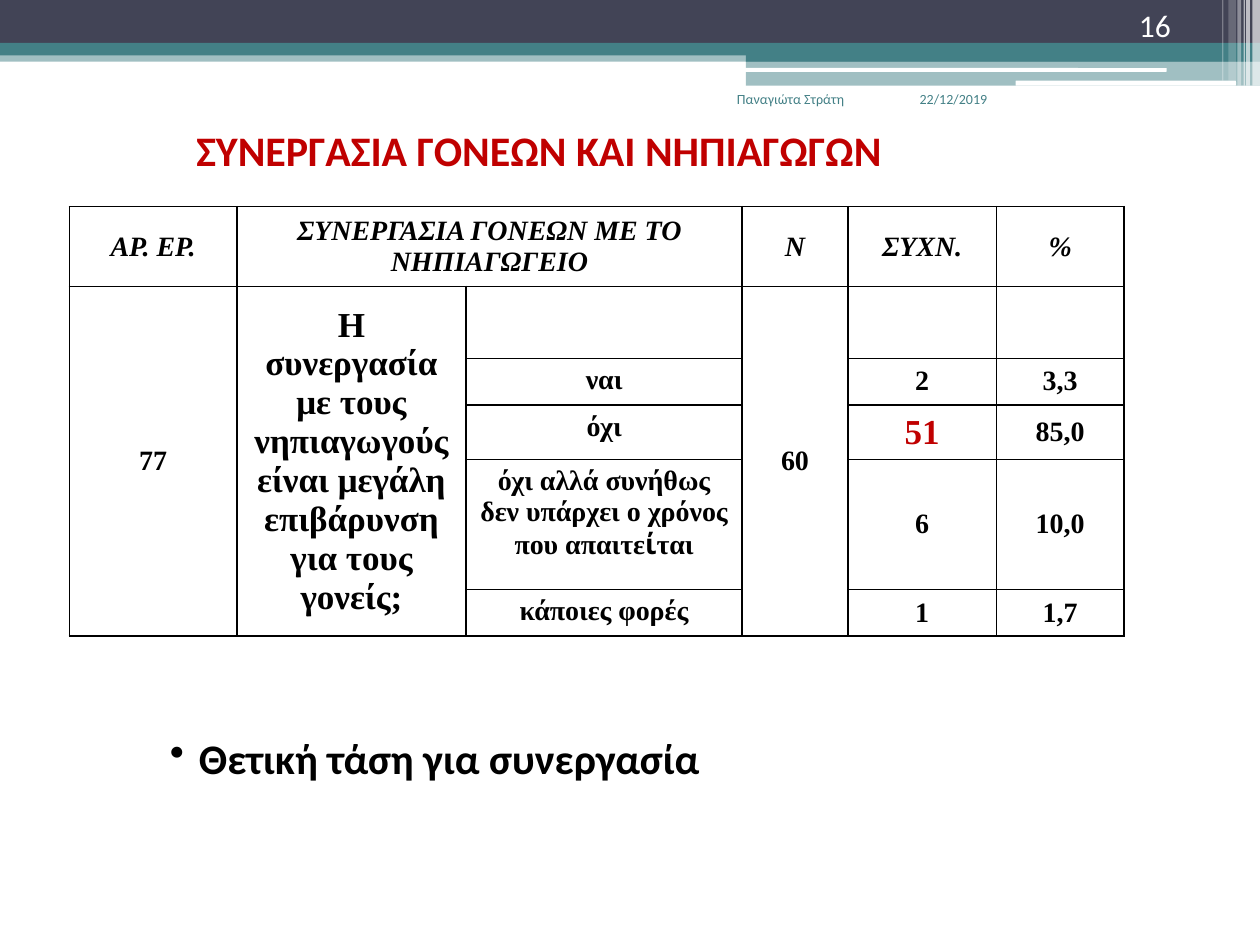
from lxml.etree import SubElement as Sub
from pptx import Presentation
from pptx.dml.color import RGBColor as RGB
from pptx.enum.shapes import MSO_SHAPE as Shape
from pptx.enum.text import MSO_ANCHOR as Anchor, PP_ALIGN as Align
from pptx.oxml.ns import qn
from pptx.util import Inches, Pt

HUES = {"navy": "424456", "teal": "438086", "white": "FFFFFF",
        "black": "000000", "red": "C00000"}
SERIF = "Times New Roman"

# left, top, width, height, hue, opacity in percent
BARS = [
    (0, 0.4, 10, 0.09, "teal", 50),
    (0, 0, 10, 0.34, "navy", 100),
    (0, 0.34, 10, 0.1, "teal", 100),
    (5.92, 0.39, 4.08, 0.1, "teal", 100),
    (5.92, 0.48, 4.08, 0.2, "teal", 50),
]
PILLS = [(5.91, 0.54, 3.35, 0.03), (8.06, 0.64, 1.75, 0.04)]
# left, width, height, opacity of the stripes at the right edge
STRIPES = [
    (9.94, 0.06, 0.68, 65), (9.89, 0.03, 0.68, 65), (9.87, 0.01, 0.68, 60),
    (9.82, 0.03, 0.68, 40), (9.75, 0.06, 0.64, 20), (9.7, 0.01, 0.64, 30),
]

COLS = [1.33, 1.82, 2.19, 0.84, 1.18, 1.01]
ROWS = [0.63, 0.57, 0.37, 0.43, 1.03, 0.37]
HEAD = ["ΑΡ. ΕΡ.", "ΣΥΝΕΡΓΑΣΙΑ ΓΟΝΕΩΝ ΜΕ ΤΟ ΝΗΠΙΑΓΩΓΕΙΟ", "", "Ν", "ΣΥΧΝ.", "%"]
ASK = "Η συνεργασία με τους νηπιαγωγούς είναι μεγάλη επιβάρυνση για τους γονείς;"
DATA = [
    HEAD,
    ["77", ASK, "", "60", "", ""],
    ["", "", "ναι", "", "2", "3,3"],
    ["", "", "όχι", "", "51", "85,0"],
    ["", "", "όχι αλλά συνήθως δεν υπάρχει ο χρόνος που απαιτε|ί|ται", "", "6", "10,0"],
    ["", "", "κάποιες φορές", "", "1", "1,7"],
]
# first and last cell of each merged block
SPANS = [((0, 1), (0, 2))] + [((1, col), (5, col)) for col in (0, 1, 3)]


def color(hue):
    return RGB.from_string(HUES[hue])


def style(font, size, hue, name="Calibri", bold=False, italic=False):
    font.size, font.name = Pt(size), name
    font.bold, font.italic = bold, italic
    font.color.rgb = color(hue)


def add_bar(slide, box, hue, alpha=100, kind=Shape.RECTANGLE):
    bar = slide.shapes.add_shape(kind, *map(Inches, box))
    bar.shadow.inherit = False
    bar.line.fill.background()
    bar.fill.solid()
    bar.fill.fore_color.rgb = color(hue)
    if alpha < 100:
        tint = bar.fill._xPr.find(".//" + qn("a:srgbClr"))
        Sub(tint, qn("a:alpha"), val=str(alpha * 1000))


def add_text(slide, box, text, size, hue, bold=False, anchor=Anchor.TOP):
    frame = slide.shapes.add_textbox(*map(Inches, box)).text_frame
    frame.word_wrap = True
    frame.vertical_anchor = anchor
    para = frame.paragraphs[0]
    para.text = text
    style(para.font, size, hue, bold=bold)
    return para


def add_bullet(para, left, hang):
    props = para._p.get_or_add_pPr()
    props.set("marL", str(Inches(left)))
    props.set("indent", str(-Inches(hang)))
    mark = Sub(props, qn("a:buChar"), char="•")
    props.insert(0, mark)


def add_edges(cell):
    props = cell._tc.get_or_add_tcPr()
    for side in ("lnL", "lnR", "lnT", "lnB"):
        line = Sub(props, qn("a:" + side), w=str(Pt(1)))
        fill = Sub(line, qn("a:solidFill"))
        Sub(fill, qn("a:srgbClr"), val=HUES["black"])


def fill_cell(cell, text, row, col):
    add_edges(cell)
    cell.fill.background()
    cell.vertical_anchor = Anchor.TOP if row > 1 and col == 2 else Anchor.MIDDLE
    if not text:
        return
    para = cell.text_frame.paragraphs[0]
    para.alignment = Align.CENTER
    size = 20 if text in (ASK, "51") else 16
    hue = "red" if text == "51" else "black"
    style(para.font, size, hue, SERIF, bold=True, italic=row == 0)
    # the middle part between bars has its own typeface
    for i, part in enumerate(text.split("|")):
        run = para.add_run()
        run.text = part
        if i == 1:
            run.font.name = "Cabin"


def add_grid(slide):
    box = (0.55, 1.64, sum(COLS), sum(ROWS))
    table = slide.shapes.add_table(len(ROWS), len(COLS), *map(Inches, box)).table
    table.first_row = table.horz_banding = False
    for col, width in zip(table.columns, COLS):
        col.width = Inches(width)
    for row, height in zip(table.rows, ROWS):
        row.height = Inches(height)
    for start, end in SPANS:
        table.cell(*start).merge(table.cell(*end))
    for r, line in enumerate(DATA):
        for c, text in enumerate(line):
            fill_cell(table.cell(r, c), text, r, c)


def main():
    deck = Presentation()
    deck.slide_width, deck.slide_height = Inches(10), Inches(7.5)
    slide = deck.slides.add_slide(deck.slide_layouts[6])

    # Top band
    for *box, hue, alpha in BARS:
        add_bar(slide, box, hue, alpha)
    for box in PILLS:
        add_bar(slide, box, "white", kind=Shape.ROUNDED_RECTANGLE)
    for left, width, height, alpha in STRIPES:
        add_bar(slide, (left, 0, width, height), "white", alpha)

    # Date, author and page number
    add_text(slide, (7.2, 0.67, 1.05, 0.5), "22/12/2019", 8, "teal")
    add_text(slide, (5.75, 0.67, 1.45, 0.5), "Παναγιώτα Στράτη", 8, "teal")
    add_text(slide, (8.94, 0, 0.83, 0.4), "16", 18, "white", anchor=Anchor.BOTTOM)

    # Title, table and closing point
    add_text(slide, (1.46, 0.94, 5.77, 0.91),
             "ΣΥΝΕΡΓΑΣΙΑ ΓΟΝΕΩΝ ΚΑΙ ΝΗΠΙΑΓΩΓΩΝ", 24, "red", bold=True)
    add_grid(slide)
    point = add_text(slide, (0.98, 5.25, 7.25, 1.01), "Θετική τάση για συνεργασία",
                     24, "black", bold=True, anchor=Anchor.BOTTOM)
    add_bullet(point, 0.5, 0.23)

    deck.save("out.pptx")


if __name__ == "__main__":
    main()
